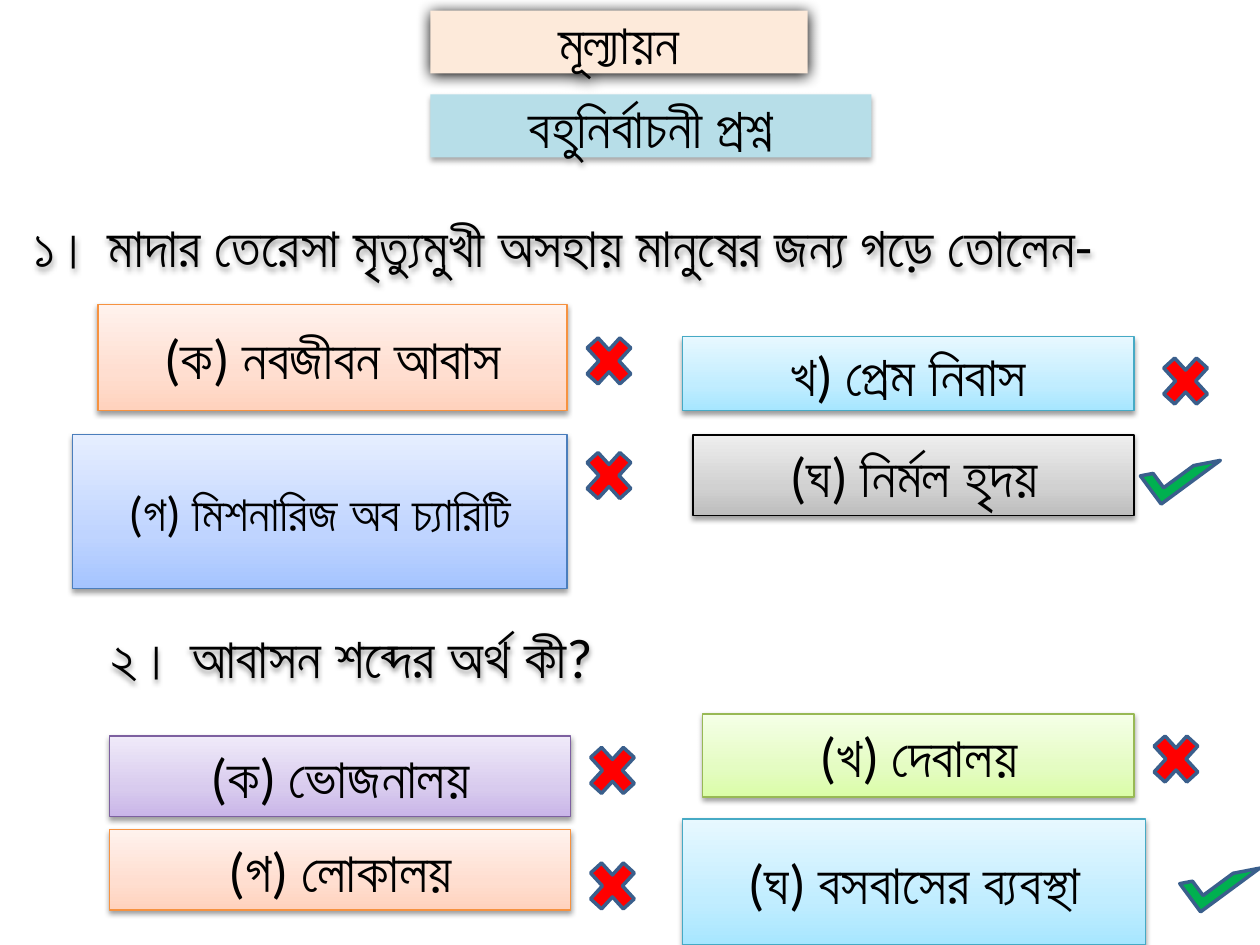
import pptx
import pptx.util
import pptx.dml.color
import pptx.enum.shapes
import pptx.enum.text
import pptx.oxml
import pptx.oxml.ns

Pt = pptx.util.Pt
RGBColor = pptx.dml.color.RGBColor
MSO_SHAPE = pptx.enum.shapes.MSO_SHAPE
PP_ALIGN = pptx.enum.text.PP_ALIGN

BLACK = RGBColor(0x00, 0x00, 0x00)
CREAM = RGBColor(0xFD, 0xEA, 0xDA)
AQUA = RGBColor(0xB7, 0xDE, 0xE8)
RED = RGBColor(0xFF, 0x00, 0x00)
GREEN = RGBColor(0x00, 0xB0, 0x50)
MARK_EDGE = RGBColor(0x3A, 0x5F, 0x8C)

# Each style: border, then gradient colours from bottom to top
ORANGE = (RGBColor(0xF6, 0x92, 0x40), "FFD2BD", "FFDED0", "FFF2ED")
CYAN = (RGBColor(0x46, 0xAA, 0xC5), "A7E6FF", "C1EDFF", "E7F8FF")
BLUE = (RGBColor(0x4B, 0x7E, 0xBC), "A4C4FF", "BFD4FF", "E6EEFF")
GREY = (BLACK, "BDBDBD", "D1D1D1", "EEEEEE")
PURPLE = (RGBColor(0x7D, 0x60, 0xA0), "C9B5E8", "D8CBEE", "F0EAF9")
LIME = (RGBColor(0x98, 0xB9, 0x55), "DAFDA7", "E4FCC2", "F5FFE7")


def write(s, text, size=32, align=PP_ALIGN.CENTER, color=BLACK, font="Calibri"):
    tf = s.text_frame
    tf.word_wrap = True
    tf.auto_size = pptx.enum.text.MSO_AUTO_SIZE.NONE
    tf.vertical_anchor = pptx.enum.text.MSO_ANCHOR.MIDDLE
    p = tf.paragraphs[0]
    p.alignment = align
    r = p.add_run()
    r.text = text
    r.font.size = Pt(size)
    r.font.name = font
    r.font.color.rgb = color


def drop_shadow(s, blur=3.1, dist=1.6, opacity=38):
    s.shadow.inherit = False
    effects = s._element.spPr.find(pptx.oxml.ns.qn("a:effectLst"))
    effects.append(pptx.oxml.parse_xml(
        f'<a:outerShdw {pptx.oxml.ns.nsdecls("a")} blurRad="{Pt(blur)}" dist="{Pt(dist)}" '
        f'dir="5400000" rotWithShape="0"><a:srgbClr val="000000">'
        f'<a:alpha val="{opacity * 1000}"/></a:srgbClr></a:outerShdw>'))


prs = pptx.Presentation()
prs.slide_width, prs.slide_height = Pt(720), Pt(540)
slide = prs.slides.add_slide(prs.slide_layouts[5])
shapes = slide.shapes

# Title and subtitle
title = shapes.title
title.left, title.top, title.width, title.height = Pt(246), Pt(6), Pt(215.5), Pt(36)
subtitle = shapes.add_shape(MSO_SHAPE.RECTANGLE, Pt(246), Pt(54), Pt(252), Pt(36))
for s, text, color, shadow in [
    (title, "মূল্যায়ন", CREAM, dict(blur=8.5, dist=1, opacity=100)),
    (subtitle, "বহুনির্বাচনী প্রশ্ন", AQUA, dict(dist=1.8, opacity=35)),
]:
    s.fill.solid()
    s.fill.fore_color.rgb = color
    s.line.fill.background()
    drop_shadow(s, **shadow)
    write(s, text)

# Questions
for text, x, y, w in [
    ("১। মাদার তেরেসা মৃত্যুমুখী অসহায় মানুষের জন্য গড়ে তোলেন-", 12, 107, 708),
    ("২। আবাসন শব্দের অর্থ কী?", 56, 342, 552),
]:
    s = shapes.add_textbox(Pt(x), Pt(y), Pt(w), Pt(66))
    write(s, text, align=PP_ALIGN.LEFT)
    drop_shadow(s)

# Answer options
for text, x, y, w, h, style, size in [
    ("(ক) নবজীবন আবাস", 56, 174, 268, 60.5, ORANGE, 32),
    ("খ) প্রেম নিবাস", 390, 192.5, 258, 42, CYAN, 32),
    ("(গ) মিশনারিজ অব চ্যারিটি", 41.5, 248.5, 282.5, 88, BLUE, 28),
    ("(ঘ) নির্মল হৃদয়", 396, 248.5, 252, 46, GREY, 32),
    ("(ক) ভোজনালয়", 62.5, 420.5, 263.5, 46, PURPLE, 32),
    ("(খ) দেবালয়", 401.5, 408, 246.5, 47.5, LIME, 32),
    ("(গ) লোকালয়", 62.5, 474, 263.5, 46, ORANGE, 32),
    ("(ঘ) বসবাসের ব্যবস্থা", 390, 468, 264.5, 72, CYAN, 32),
]:
    s = shapes.add_shape(MSO_SHAPE.RECTANGLE, Pt(x), Pt(y), Pt(w), Pt(h))
    edge, *colors = style
    stops = "".join(f'<a:gs pos="{pos}"><a:srgbClr val="{c}"/></a:gs>'
                    for pos, c in zip((0, 35000, 100000), colors))
    s._element.spPr.append(pptx.oxml.parse_xml(
        f'<a:gradFill {pptx.oxml.ns.nsdecls("a")} rotWithShape="1"><a:gsLst>{stops}</a:gsLst>'
        f'<a:lin ang="16200000" scaled="0"/></a:gradFill>'))
    s.line.color.rgb = edge
    s.line.width = Pt(0.75)
    drop_shadow(s)
    write(s, text, size=size)

# Crosses on wrong answers, ticks on right ones
crosses = [(330, 186.5), (659.5, 198), (330, 252), (332, 420.5), (654, 414), (332, 486.5)]
ticks = [(664.5, 246.5), (687, 479.5)]
for kind, places, w, h, angle, color in [
    (MSO_SHAPE.MATH_MULTIPLY, crosses, 36, 39.5, 0, RED),
    (MSO_SHAPE.HALF_FRAME, ticks, 20, 42, 233.6, GREEN),
]:
    for x, y in places:
        s = shapes.add_shape(kind, Pt(x), Pt(y), Pt(w), Pt(h))
        s.rotation = angle
        s.fill.solid()
        s.fill.fore_color.rgb = color
        s.line.color.rgb = MARK_EDGE
        s.line.width = Pt(2)
        s.shadow.inherit = False

prs.save("out.pptx")
